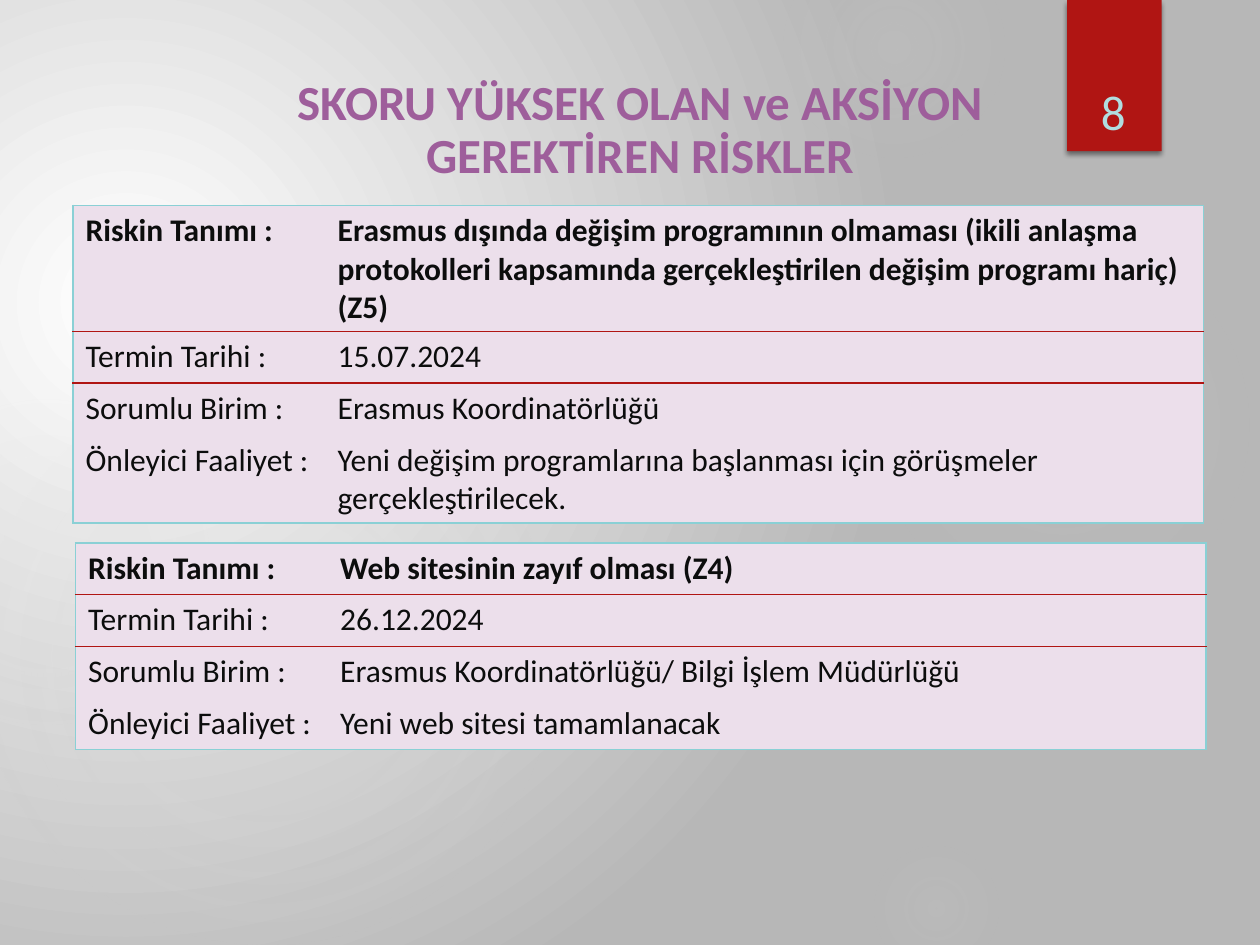
from dataclasses import dataclass

from lxml import etree
from pptx import Presentation
from pptx.dml.color import RGBColor
from pptx.enum.shapes import MSO_SHAPE as Shape
from pptx.enum.text import MSO_ANCHOR as Anchor, PP_ALIGN as Align
from pptx.oxml import parse_xml
from pptx.oxml.ns import nsdecls, qn
from pptx.util import Inches, Pt


@dataclass(frozen=True)
class Theme:
    font: str = "Calibri"
    title_size: int = 28
    body_size: int = 18
    title: str = "9E5E9B"
    number: str = "B1DDE0"
    ribbon: str = "B01513"
    text: str = "0C0D0D"
    cell: str = "ECDFEB"
    border: str = "8AD0D5"
    glow: str = "D9D9D9"
    bg_inner: str = "FFFFFF"
    bg_outer: str = "B7B7B7"


@dataclass(frozen=True)
class Glow:
    left: float
    top: float
    size: float
    stops: tuple[tuple[int, int], ...]  # position %, opacity %


@dataclass(frozen=True)
class Risk:
    left: float
    top: float
    values: tuple[str, ...]


THEME = Theme()
LABELS = ("Riskin Tanımı :", "Termin Tarihi :", "Sorumlu Birim :", "Önleyici Faaliyet :")
COL_WIDTHS = (2, 6.97)
ROW_HEIGHT = 0.41
NO_STYLE = "{2D5ABB26-0587-4C30-8999-92F81FD0307C}"

GLOWS = (
    Glow(6.89, 1.83, 3.08, ((0, 7), (36, 6), (69, 0))),
    Glow(6.22, -0.5, 1.75, ((0, 14), (36, 7), (73, 0))),
    Glow(6.89, 6.67, 1.08, ((0, 9), (36, 5), (66, 0))),
    Glow(-0.17, 2.92, 4.58, ((0, 11), (36, 10), (75, 0))),
    Glow(-0.92, 3.17, 2.58, ((0, 8), (36, 8), (72, 0))),
)
RISKS = (
    Risk(0.58, 1.63, (
        "Erasmus dışında değişim programının olmaması (ikili anlaşma protokolleri "
        "kapsamında gerçekleştirilen değişim programı hariç) (Z5)",
        "15.07.2024",
        "Erasmus Koordinatörlüğü",
        "Yeni değişim programlarına başlanması için görüşmeler gerçekleştirilecek.",
    )),
    Risk(0.6, 4.31, (
        "Web sitesinin zayıf olması (Z4)",
        "26.12.2024",
        "Erasmus Koordinatörlüğü/ Bilgi İşlem Müdürlüğü",
        "Yeni web sitesi tamamlanacak",
    )),
)


def rgb(color: str) -> RGBColor:
    return RGBColor.from_string(color)


def set_radial_fill(fill, element, stops, focus=(50, 50, 50, 50)) -> None:
    """Fill with a circular gradient; stops are (position, colour, opacity) in percent."""
    fill.solid()
    gs = "".join(
        f'<a:gs pos="{pos * 1000}"><a:srgbClr val="{color}">'
        f'<a:alpha val="{alpha * 1000}"/></a:srgbClr></a:gs>'
        for pos, color, alpha in stops
    )
    left, top, right, bottom = (v * 1000 for v in focus)
    solid = element.find(".//" + qn("a:solidFill"))
    solid.getparent().replace(solid, parse_xml(
        f'<a:gradFill {nsdecls("a")} rotWithShape="1"><a:gsLst>{gs}</a:gsLst>'
        f'<a:path path="circle"><a:fillToRect l="{left}" t="{top}" r="{right}" '
        f'b="{bottom}"/></a:path></a:gradFill>'
    ))


def add_plain_shape(s, kind: Shape, left: float, top: float, width: float, height: float):
    sp = s.shapes.add_shape(kind, Inches(left), Inches(top), Inches(width), Inches(height))
    sp.shadow.inherit = False
    sp.line.fill.background()
    return sp


def add_glow(s, glow: Glow) -> None:
    sp = add_plain_shape(s, Shape.OVAL, glow.left, glow.top, glow.size, glow.size)
    set_radial_fill(sp.fill, sp._element, [(pos, THEME.glow, a) for pos, a in glow.stops])


def add_ribbon(s) -> None:
    sp = add_plain_shape(s, Shape.RECTANGLE, 8.47, 0, 0.75, 1.2)
    sp.fill.solid()
    sp.fill.fore_color.rgb = rgb(THEME.ribbon)
    sp._element.spPr.find(qn("a:effectLst")).append(parse_xml(
        f'<a:outerShdw {nsdecls("a")} blurRad="{Pt(3)}" dist="{Pt(2)}" dir="5400000" '
        'rotWithShape="0"><a:srgbClr val="000000"><a:alpha val="45000"/></a:srgbClr>'
        "</a:outerShdw>"
    ))


def write(tf, text: str, size: int, color: str, bold: bool = False):
    p = tf.paragraphs[0]
    p.text = text
    p.font.name = THEME.font
    p.font.size = Pt(size)
    p.font.bold = bold
    p.font.color.rgb = rgb(color)
    return p


def add_heading(s, text: str, left: float, top: float, width: float, height: float,
                color: str, bold: bool = False):
    """Add centred, bottom-anchored text and return its paragraph."""
    box = s.shapes.add_textbox(Inches(left), Inches(top), Inches(width), Inches(height))
    tf = box.text_frame
    tf.word_wrap = True
    tf.vertical_anchor = Anchor.BOTTOM
    p = write(tf, text, THEME.title_size, color, bold)
    p.alignment = Align.CENTER
    return p


def set_borders(cell, borders: dict[str, str]) -> None:
    """Draw 1 pt cell borders, keyed by side in the order L, R, T, B."""
    tc_pr = cell._tc.get_or_add_tcPr()
    for i, (side, color) in enumerate(borders.items()):
        ln = etree.Element(qn(f"a:ln{side}"), w=str(Pt(1)))
        fill = etree.SubElement(ln, qn("a:solidFill"))
        etree.SubElement(fill, qn("a:srgbClr"), val=color)
        tc_pr.insert(i, ln)


def add_risk_table(s, risk: Risk) -> None:
    rows = list(zip(LABELS, risk.values))
    frame = s.shapes.add_table(len(rows), 2, Inches(risk.left), Inches(risk.top),
                               Inches(sum(COL_WIDTHS)), Inches(ROW_HEIGHT * len(rows)))
    table = frame.table
    table.horz_banding = False
    table._tbl.tblPr.find(qn("a:tableStyleId")).text = NO_STYLE
    for column, width in zip(table.columns, COL_WIDTHS):
        column.width = Inches(width)
    for r, texts in enumerate(rows):
        for c, text in enumerate(texts):
            cell = table.cell(r, c)
            write(cell.text_frame, text, THEME.body_size, THEME.text, bold=r == 0)
            cell.fill.solid()
            cell.fill.fore_color.rgb = rgb(THEME.cell)
            borders = {"L" if c == 0 else "R": THEME.border}
            if r == 0:
                borders |= {"T": THEME.border, "B": THEME.ribbon}
            elif r == 1:
                borders["T"] = THEME.ribbon
            elif r == len(rows) - 1:
                borders["B"] = THEME.border
            set_borders(cell, borders)


def main() -> None:
    prs = Presentation()
    prs.slide_width, prs.slide_height = Inches(10), Inches(7.5)
    s = prs.slides.add_slide(prs.slide_layouts[6])
    set_radial_fill(s.background.fill, s._element,
                    [(0, THEME.bg_inner, 100), (100, THEME.bg_outer, 100)],
                    focus=(45, 65, 125, 100))
    for glow in GLOWS:
        add_glow(s, glow)
    add_ribbon(s)
    title = add_heading(s, "SKORU YÜKSEK OLAN ve AKSİYON GEREKTİREN RİSKLER",
                        2.2, 0.58, 5.76, 0.93, THEME.title, bold=True)
    title.line_spacing = 0.9
    title.space_after = Pt(6)
    for risk in RISKS:
        add_risk_table(s, risk)
    add_heading(s, "8", 8.49, 0.32, 0.69, 0.84, THEME.number)
    prs.save("out.pptx")


if __name__ == "__main__":
    main()
